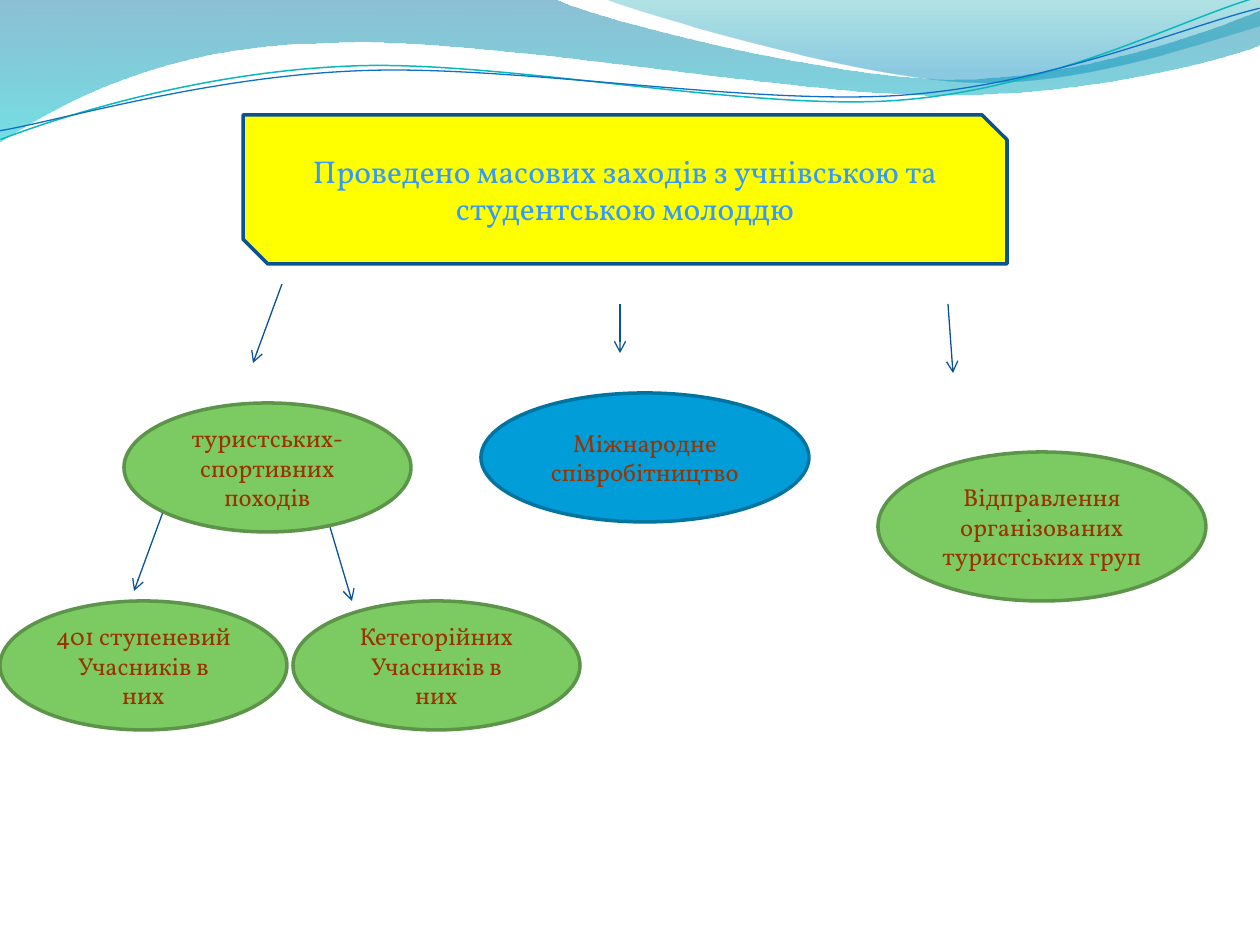
from lxml import etree
from pptx import Presentation
from pptx.dml.color import RGBColor
from pptx.enum.shapes import MSO_CONNECTOR, MSO_SHAPE
from pptx.enum.text import MSO_ANCHOR, PP_ALIGN
from pptx.oxml.ns import qn
from pptx.util import Inches, Pt

PX = Inches(10) / 1260
STRAIGHT = MSO_CONNECTOR.STRAIGHT
ELLIPSE, SNIPPED = MSO_SHAPE.OVAL, MSO_SHAPE.SNIP_2_DIAG_RECTANGLE
MIDDLE, CENTER = MSO_ANCHOR.MIDDLE, PP_ALIGN.CENTER

YELLOW = RGBColor(0xFF, 0xFF, 0x00)
NAVY = RGBColor(0x0B, 0x52, 0x92)
SKY = RGBColor(0x33, 0x99, 0xFF)
BROWN = RGBColor(0x99, 0x33, 0x00)
GREEN = RGBColor(0x7C, 0xCA, 0x62)
DARK_GREEN = RGBColor(0x5C, 0x95, 0x49)
BLUE = RGBColor(0x00, 0x9D, 0xD9)
DARK_BLUE = RGBColor(0x00, 0x74, 0xA1)
ARROW = RGBColor(0x09, 0x52, 0x95)
CYAN = RGBColor(0x00, 0xC6, 0xCF)
TEAL = RGBColor(0x00, 0xA1, 0xA9)
AZURE = RGBColor(0x00, 0x8B, 0xBF)
TEAL_LINE = RGBColor(0x0A, 0xB8, 0xBF)
BLUE_LINE = RGBColor(0x0F, 0x6F, 0xC6)


def px(*values):
    return [round(v * PX) for v in values]


class SlideBuilder:
    font = "Vollkorn"
    outline_width = Pt(2)
    arrow_width = Pt(0.75)
    curve_rotation = -2.7

    def __init__(self, slide):
        self.shapes = slide.shapes

    def outline(self, start, segments, close):
        """Freeform of straight (1 point) and cubic (3 points) segments."""
        builder = self.shapes.build_freeform(*px(*start))
        points = [px(*point) for segment in segments for point in segment]
        builder.add_line_segments(points, close=close)
        sp = builder.convert_to_shape()
        sp.shadow.inherit = False
        steps = iter(list(sp._element.spPr.iter(qn("a:lnTo"))))
        for segment in segments:
            first, *others = [next(steps) for _ in segment]
            if others:
                cubic = etree.Element(qn("a:cubicBezTo"))
                first.addprevious(cubic)
                for step in (first, *others):
                    cubic.append(step[0])
                    step.getparent().remove(step)
        return sp

    def wave(self, start, segments, stops):
        """Closed shape with a top-down gradient of (position, colour, opacity %)."""
        sp = self.outline(start, segments, True)
        sp.line.fill.background()
        sp.fill.gradient()
        sp.fill.gradient_angle = 270
        for stop, (position, color, _) in zip(sp.fill.gradient_stops, stops):
            stop.position = position
            stop.color.rgb = color
        colors = sp._element.spPr.iter(qn("a:srgbClr"))
        for element, (_, _, opacity) in zip(colors, stops):
            etree.SubElement(element, qn("a:alpha"), val=str(opacity * 1000))

    def curve(self, start, segments, color, width):
        sp = self.outline(start, segments, False)
        sp.rotation = self.curve_rotation
        sp.fill.background()
        sp.line.color.rgb = color
        sp.line.width = Pt(width)

    def box(self, kind, at, text, fill, line, color=BROWN, size=14):
        sp = self.shapes.add_shape(kind, *px(*at))
        sp.shadow.inherit = False
        sp.fill.solid()
        sp.fill.fore_color.rgb = fill
        sp.line.color.rgb = line
        sp.line.width = self.outline_width
        tf = sp.text_frame
        tf.word_wrap = True
        tf.vertical_anchor = MIDDLE
        tf.text = text
        for p in tf.paragraphs:
            p.alignment = CENTER
            for r in p.runs:
                r.font.name = self.font
                r.font.size = Pt(size)
                r.font.color.rgb = color

    def arrow(self, start, end):
        cxn = self.shapes.add_connector(STRAIGHT, *px(*start, *end))
        cxn.line.color.rgb = ARROW
        cxn.line.width = self.arrow_width
        etree.SubElement(cxn.line._get_or_add_ln(), qn("a:tailEnd"), type="arrow")
        etree.SubElement(cxn._element.spPr, qn("a:effectLst"))


def main():
    prs = Presentation()
    prs.slide_width, prs.slide_height = Inches(10), Inches(7.5)
    s = SlideBuilder(prs.slides.add_slide(prs.slide_layouts[6]))

    s.wave((0, 0), [
        [(554, -1)],
        [(600, 21), (837, 79), (955, 79)],
        [(1075, 79), (1207, 33), (1260, 11)],
        [(1261, 45)],
        [(1239, 55), (1096, 96), (940, 95)],
        [(784, 95), (481, 35), (324, 43)],
        [(163, 45), (58, 105), (-1, 142)],
    ], [(0, DARK_BLUE, 45), (1, CYAN, 55)])
    s.wave((604, -1), [
        [(641, 14), (859, 78), (969, 82)],
        [(1079, 87), (1211, 40), (1260, 26)],
        [(1260, 0)],
    ], [(0, TEAL, 30), (0.8, AZURE, 45)])
    s.curve((-2, 110), [
        [(58, 90), (199, 52), (350, 53)],
        [(499, 53), (745, 117), (896, 113)],
        [(1049, 109), (1184, 45), (1260, 27)],
    ], TEAL_LINE, 0.85)
    s.curve((-2, 101), [
        [(57, 94), (207, 57), (357, 58)],
        [(509, 58), (750, 112), (902, 108)],
        [(1052, 104), (1188, 52), (1262, 38)],
    ], BLUE_LINE, 0.75)

    s.box(SNIPPED, (243, 115, 764, 149),
          "Проведено масових заходів з учнівською та студентською молоддю",
          YELLOW, NAVY, SKY, 18)
    for start, end in [
        ((282, 284), (253, 363)),
        ((620, 304), (620, 353)),
        ((948, 304), (953, 373)),
    ]:
        s.arrow(start, end)

    s.box(ELLIPSE, (481, 393, 328, 129), "Міжнародне співробітництво", BLUE, DARK_BLUE)
    s.arrow((163, 512), (134, 591))
    s.arrow((330, 527), (352, 601))
    for at, text in [
        ((878, 452, 328, 149), "Відправлення організованих туристських груп"),
        ((0, 601, 287, 129), "401 ступеневий\nУчасників в них"),
        ((293, 601, 287, 129), "Кетегорійних\nУчасників в них"),
        ((124, 403, 287, 129), "туристських-спортивних походів"),
    ]:
        s.box(ELLIPSE, at, text, GREEN, DARK_GREEN)

    prs.save("out.pptx")


if __name__ == "__main__":
    main()
